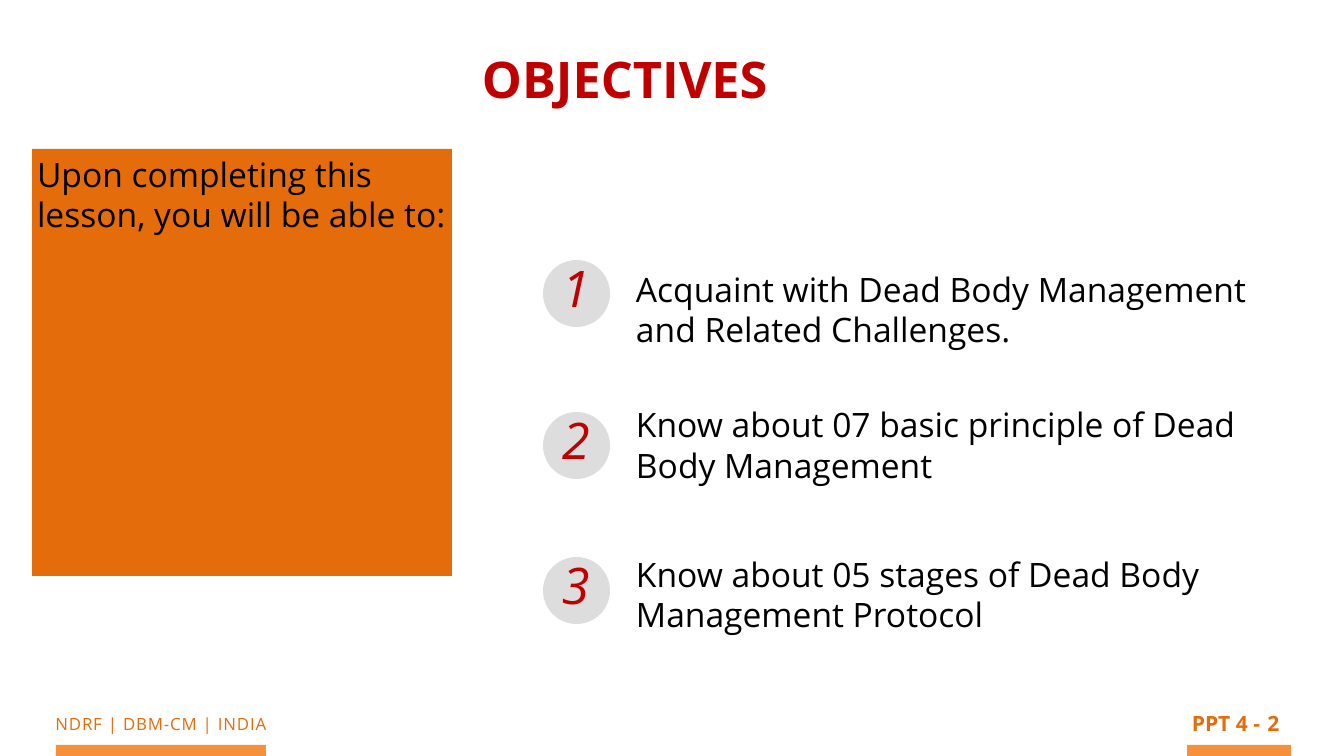
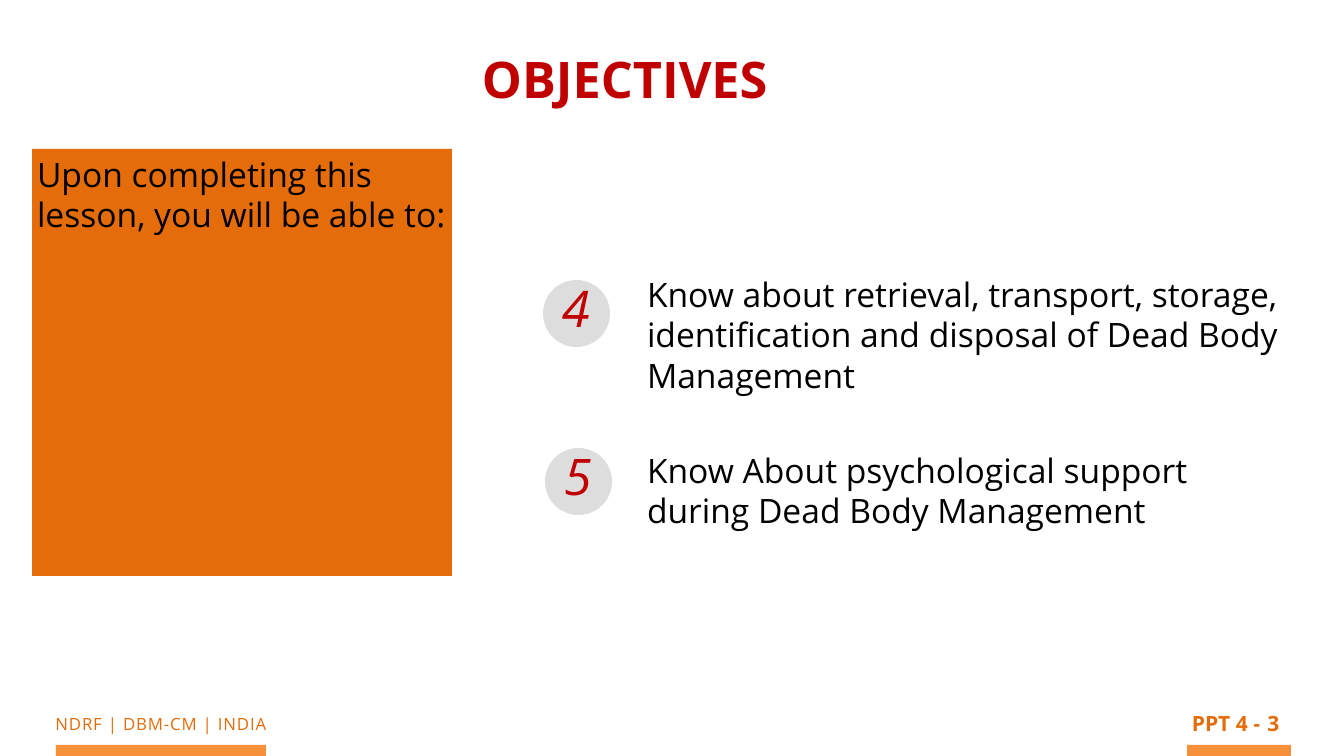
"""Build two lesson objectives slides with a shared title, side panel and footer."""
from pptx import Presentation
from pptx.dml.color import RGBColor
from pptx.enum.shapes import MSO_SHAPE
from pptx.enum.text import MSO_ANCHOR, MSO_AUTO_SIZE, PP_ALIGN
from pptx.oxml.ns import qn
from pptx.util import Emu, Pt
from lxml.etree import SubElement

FONT = "Open Sans"
COLORS = {
    "panel": "E46C0A",
    "bar": "F7903B",
    "red": "C00000",
    "disc": "DDDDDD",
    "text": "000000",
}
SLIDES = [
    {
        "page": "2",
        "list_box": (631, 264, 632, 377),
        "gaps": (0, 78, 98),
        "items": [
            ("1", 543, 260, "Acquaint with Dead Body Management and Related Challenges."),
            ("2", 543, 412, "Know about 07 basic principle of Dead Body Management"),
            ("3", 543, 557, "Know about 05 stages of Dead Body Management Protocol"),
        ],
    },
    {
        "page": "3",
        "list_box": (642, 269, 644, 315),
        "gaps": (0, 78),
        "items": [
            ("4", 543, 280, "Know about retrieval, transport, storage, identification "
                            "and disposal of Dead Body Management"),
            ("5", 545, 448, "Know About psychological support during Dead Body Management"),
        ],
    },
]


def px(*values):
    """Turn pixels, 50.4 to the inch, into EMU."""
    return [Emu(round(v * 914400 / 50.4)) for v in values]


def put_text(sp, *texts, size=48, color="text", bold=False, italic=False,
             align=PP_ALIGN.LEFT, wrap=True, gaps=(0,), spacing=0):
    """Write one formatted paragraph for each text."""
    tf = sp.text_frame
    tf.word_wrap = wrap
    tf.auto_size = MSO_AUTO_SIZE.NONE
    tf.vertical_anchor = MSO_ANCHOR.TOP
    tf.margin_left, tf.margin_top, tf.margin_right, tf.margin_bottom = px(5, 5, 5, 5)
    for i, (text, gap) in enumerate(zip(texts, gaps)):
        p = tf.paragraphs[0] if i == 0 else tf.add_paragraph()
        pPr = p._p.get_or_add_pPr()
        pPr.set("marL", "0")
        pPr.set("indent", "0")
        SubElement(pPr, qn("a:buNone"))
        p.alignment = align
        p.space_before = Pt(gap)
        r = p.add_run()
        r.text = text
        r.font.name = FONT
        r.font.size = Pt(size)
        r.font.bold = bold
        r.font.italic = italic
        r.font.color.rgb = RGBColor.from_string(COLORS[color])
        if spacing:
            r._r.get_or_add_rPr().set("spc", str(spacing))


prs = Presentation()
prs.slide_width, prs.slide_height = px(1344, 756)

for content in SLIDES:
    s = prs.slides.add_slide(prs.slide_layouts[1])
    title, body = s.placeholders[0], s.placeholders[1]

    title.left, title.top, title.width, title.height = px(477, 43, 305, 77)
    put_text(title, "OBJECTIVES", size=72, color="red", bold=True)

    for color, box in (("bar", (56, 745, 210, 11)),
                       ("bar", (1187, 745, 104, 11)),
                       ("panel", (32, 149, 420, 427))):
        panel = s.shapes.add_shape(MSO_SHAPE.RECTANGLE, *px(*box))
        panel.shadow.inherit = False
        panel.fill.solid()
        panel.fill.fore_color.rgb = RGBColor.from_string(COLORS[color])
        panel.line.fill.background()
    put_text(panel, "Upon completing this lesson, you will be able to:")

    footer = s.shapes.add_textbox(*px(33, 709, 256, 29))
    put_text(footer, "NDRF | DBM-CM | INDIA", size=24, color="panel",
             align=PP_ALIGN.CENTER, spacing=120)
    for text, box in (("PPT 4 -", (1187, 706, 78, 34)),
                      (content["page"], (1263, 706, 21, 37))):
        page = s.shapes.add_textbox(*px(*box))
        put_text(page, text, size=30, color="panel", bold=True,
                 align=PP_ALIGN.CENTER, wrap=False)

    body.left, body.top, body.width, body.height = px(*content["list_box"])
    put_text(body, *[item[3] for item in content["items"]], gaps=content["gaps"])

    for number, left, top, _ in content["items"]:
        badge = s.shapes.add_group_shape()
        disc = badge.shapes.add_shape(MSO_SHAPE.OVAL, *px(left, top, 67, 67))
        disc.shadow.inherit = False
        disc.fill.solid()
        disc.fill.fore_color.rgb = RGBColor.from_string(COLORS["disc"])
        disc.line.fill.background()
        label = badge.shapes.add_textbox(*px(left + 14, top - 8, 45, 93))
        put_text(label, number, size=72, color="red", italic=True)

prs.save("out.pptx")
